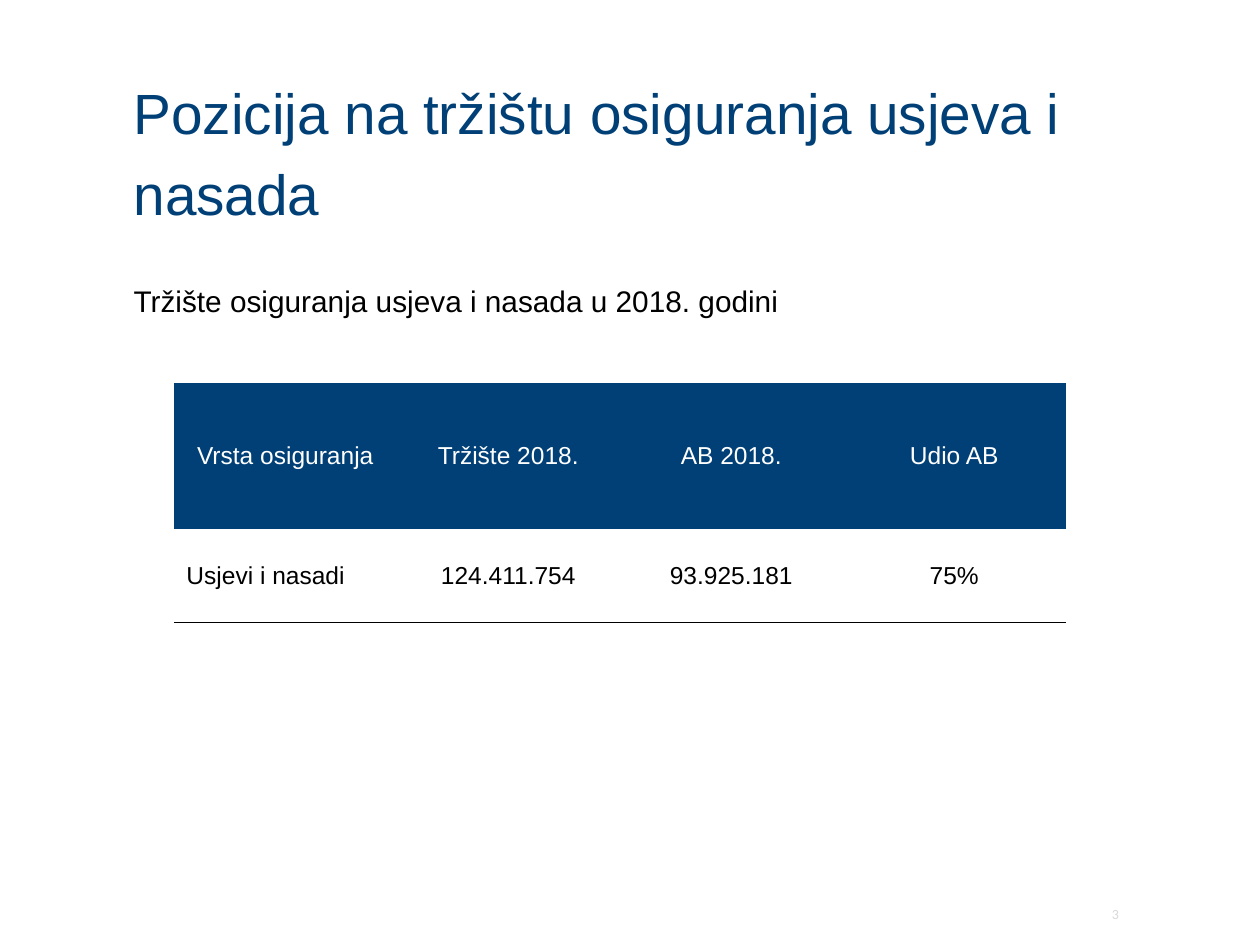
from dataclasses import dataclass

from lxml.etree import SubElement
from pptx import Presentation
from pptx.dml.color import RGBColor as RGB
from pptx.enum.text import MSO_ANCHOR as Anchor, PP_ALIGN as Align
from pptx.oxml.ns import qn
from pptx.util import Inches, Pt

# Content
TITLE = "Pozicija na tržištu osiguranja usjeva i nasada"
SUBTITLE = "Tržište osiguranja usjeva i nasada u 2018. godini"
PAGE = "3"
MARKET = [
    ("Vrsta osiguranja", "Tržište 2018.", "AB 2018.", "Udio AB"),
    ("Usjevi i nasadi", "124.411.754", "93.925.181", "75%"),
]


@dataclass(frozen=True)
class Theme:
    navy: RGB = RGB(0x00, 0x40, 0x77)
    black: RGB = RGB(0, 0, 0)
    white: RGB = RGB(255, 255, 255)
    grey: RGB = RGB(0xD9, 0xD9, 0xD9)
    font: str = "Arial"
    page_font: str = "Calibri"
    title: float = 32.4
    subtitle: float = 17
    cell: float = 14
    page: float = 8
    rule: float = 0.25


T = Theme()

# Layout, in inches
LEFT, WIDTH = 1.06, 7.92
TABLE_LEFT, TABLE_TOP, TABLE_WIDTH = 1.38, 3.04, 7.08
ROW_HEIGHTS = (1.16, 0.74)


def style(p, size, color, font=T.font, align=Align.LEFT):
    p.alignment = align
    p.font.size, p.font.name, p.font.bold = Pt(size), font, False
    p.font.color.rgb = color


def add_text(slide, text, box, size, color, spacing=None, inset=True,
             anchor=Anchor.TOP, **kwargs):
    tf = slide.shapes.add_textbox(*map(Inches, box)).text_frame
    tf.word_wrap = True
    tf.vertical_anchor = anchor
    if not inset:
        tf.margin_left = tf.margin_top = tf.margin_right = tf.margin_bottom = 0
    p = tf.paragraphs[0]
    p.text = text
    if spacing:
        p.line_spacing = Pt(spacing)
    style(p, size, color, **kwargs)


def set_borders(cell, bottom=None):
    """Clear all cell borders, keeping a bottom rule if a colour is given."""
    tc_pr = cell._tc.get_or_add_tcPr()
    for i, side in enumerate("LRTB"):
        ln = SubElement(tc_pr, qn(f"a:ln{side}"), w=str(Pt(T.rule)))
        if side == "B" and bottom is not None:
            fill = SubElement(ln, qn("a:solidFill"))
            SubElement(fill, qn("a:srgbClr"), val=str(bottom))
        else:
            SubElement(ln, qn("a:noFill"))
        tc_pr.insert(i, ln)


def add_market_table(slide):
    n_cols = len(MARKET[0])
    table = slide.shapes.add_table(
        len(MARKET), n_cols, Inches(TABLE_LEFT), Inches(TABLE_TOP),
        Inches(TABLE_WIDTH), Inches(sum(ROW_HEIGHTS))).table
    table.first_row = table.horz_banding = False
    for col in table.columns:
        col.width = Inches(TABLE_WIDTH / n_cols)
    for r, (values, height) in enumerate(zip(MARKET, ROW_HEIGHTS)):
        table.rows[r].height = Inches(height)
        header = r == 0
        for c, value in enumerate(values):
            cell = table.cell(r, c)
            cell.text = value
            cell.vertical_anchor = Anchor.MIDDLE
            cell.fill.solid()
            cell.fill.fore_color.rgb = T.navy if header else T.white
            style(cell.text_frame.paragraphs[0], T.cell,
                  T.white if header else T.black,
                  align=Align.CENTER if header or c else Align.LEFT)
            set_borders(cell, None if header else T.black)


def main():
    prs = Presentation()
    prs.slide_width, prs.slide_height = Inches(10), Inches(7.5)
    slide = prs.slides.add_slide(prs.slide_layouts[6])

    # Subtitle, page number and title
    add_text(slide, SUBTITLE, (LEFT, 2.25, WIDTH, 0.87), T.subtitle, T.black,
             spacing=20, inset=False)
    add_text(slide, PAGE, (6.73, 7.05, 2.25, 0.4), T.page, T.grey,
             anchor=Anchor.MIDDLE, font=T.page_font, align=Align.RIGHT)
    add_text(slide, TITLE, (LEFT, 0.52, WIDTH, 1.1), T.title, T.navy,
             spacing=46, inset=False)

    # Market table
    add_market_table(slide)
    prs.save("out.pptx")


if __name__ == "__main__":
    main()
